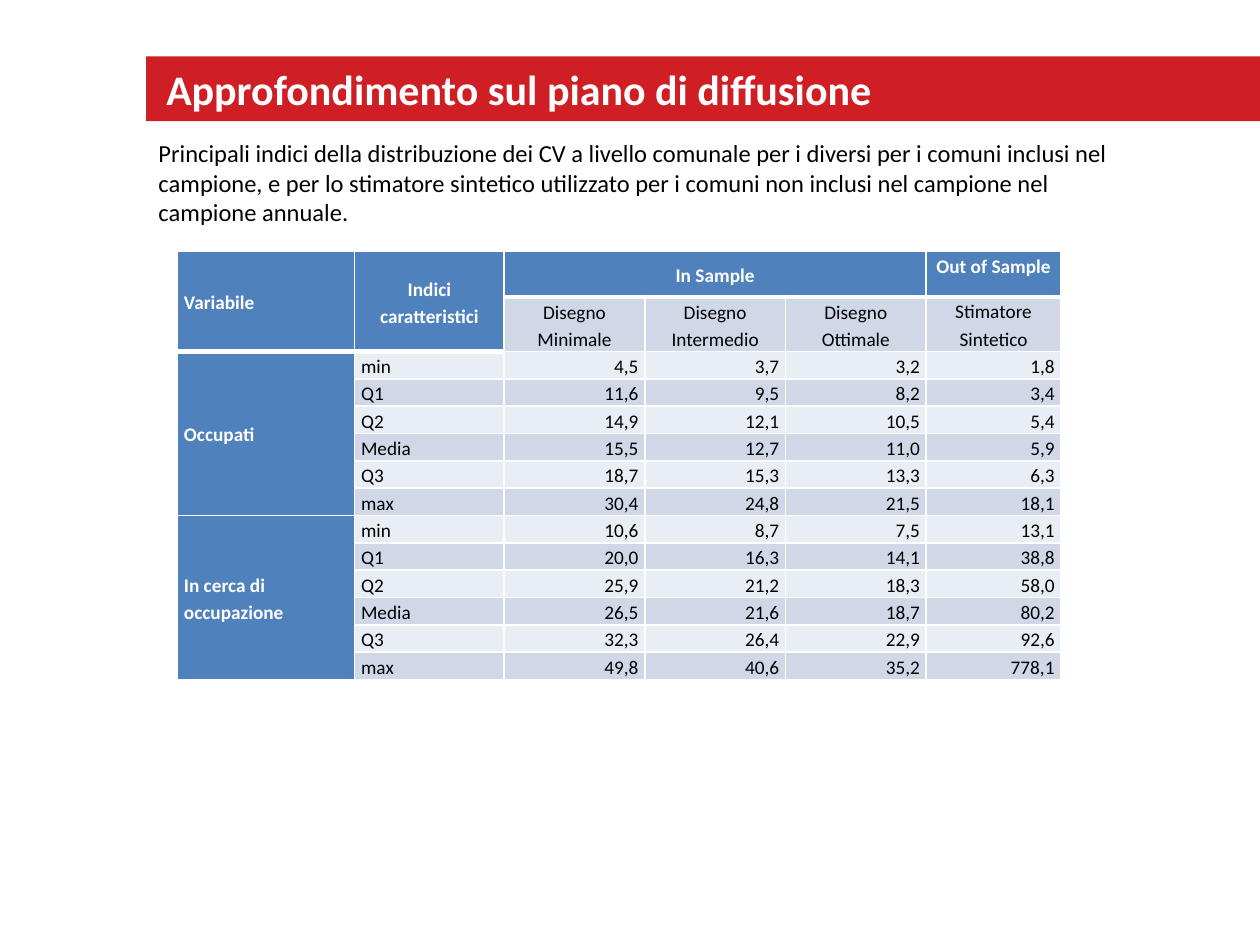
from lxml.etree import SubElement
from pptx import Presentation
from pptx.dml.color import RGBColor
from pptx.enum.text import MSO_ANCHOR as Anchor, MSO_AUTO_SIZE as AutoSize, PP_ALIGN as Align
from pptx.oxml.ns import qn
from pptx.util import Pt

COLORS = {
    "banner": "CF1E24",
    "header": "4F81BD",
    "dark_band": "D0D8E8",
    "light_band": "E9EDF4",
    "white": "FFFFFF",
    "black": "000000",
}
FONT = "Calibri"
TITLE = "Approfondimento sul piano di diffusione"
INTRO = (
    "Principali indici della distribuzione dei CV a livello comunale per i diversi "
    "per i comuni inclusi nel campione, e per lo stimatore sintetico utilizzato per "
    "i comuni non inclusi nel campione nel campione annuale."
)
GROUPS = ["Variabile", "Indici caratteristici", "In Sample", "", "", "Out of Sample"]
ESTIMATORS = ["", "", "Disegno Minimale", "Disegno Intermedio", "Disegno Ottimale", "Stimatore Sintetico"]
INDICES = ["min", "Q1", "Q2", "Media", "Q3", "max"]
VARIABLES = {
    "Occupati": [
        "4,5 3,7 3,2 1,8",
        "11,6 9,5 8,2 3,4",
        "14,9 12,1 10,5 5,4",
        "15,5 12,7 11,0 5,9",
        "18,7 15,3 13,3 6,3",
        "30,4 24,8 21,5 18,1",
    ],
    "In cerca di occupazione": [
        "10,6 8,7 7,5 13,1",
        "20,0 16,3 14,1 38,8",
        "25,9 21,2 18,3 58,0",
        "26,5 21,6 18,7 80,2",
        "32,3 26,4 22,9 92,6",
        "49,8 40,6 35,2 778,1",
    ],
}
COLUMN_WIDTHS = [101.2, 85.4, 80.4, 80.4, 80.4, 77]
HEADER_HEIGHTS = [26, 28]
INDEX_HEIGHT = 13.8
MERGES = [(0, 0, 1, 0), (0, 1, 1, 1), (0, 2, 0, 4), (2, 0, 7, 0), (8, 0, 13, 0)]


def rgb(color):
    """Return the named colour."""
    return RGBColor.from_string(COLORS[color])


def write(frame, text, size, color, bold=False, align=Align.LEFT, spacing=None):
    """Write one formatted paragraph into a text frame."""
    paragraph = frame.paragraphs[0]
    paragraph.alignment = align
    paragraph.line_spacing = spacing
    run = paragraph.add_run()
    run.text = text
    run.font.name = FONT
    run.font.size = Pt(size)
    run.font.bold = bold
    run.font.color.rgb = rgb(color)


def add_title(slide):
    """Turn the title placeholder into the red banner."""
    banner = slide.shapes.title
    banner.left, banner.top, banner.width, banner.height = Pt(83.5), Pt(32.2), Pt(636.5), Pt(37)
    banner.fill.solid()
    banner.fill.fore_color.rgb = rgb("banner")
    frame = banner.text_frame
    frame.auto_size = AutoSize.NONE
    frame.vertical_anchor = Anchor.MIDDLE
    frame.margin_left = Pt(11.5)
    frame.margin_top = frame.margin_right = frame.margin_bottom = 0
    write(frame, TITLE, 24, "white", bold=True)


def add_intro(slide):
    """Add the paragraph that introduces the table."""
    intro = slide.shapes.add_textbox(Pt(83.5), Pt(75.6), Pt(558.7), Pt(81.4))
    frame = intro.text_frame
    frame.word_wrap = True
    frame.auto_size = AutoSize.SHAPE_TO_FIT_TEXT
    write(frame, INTRO, 14, "black")


def set_borders(cell, bottom):
    """Draw white borders, with the given width at the bottom."""
    properties = cell._tc.get_or_add_tcPr()
    for side, width in (("L", 1), ("R", 1), ("T", 1), ("B", bottom)):
        line = SubElement(properties, qn(f"a:ln{side}"), w=str(Pt(width)))
        SubElement(SubElement(line, qn("a:solidFill")), qn("a:srgbClr"), val=COLORS["white"])


def format_cell(cell, text, row, column):
    """Style one cell by its place in the table and write its text."""
    is_header = row == 0 or column == 0 or (row == 1 and column == 1)
    is_thick = row == 0 or (row == 1 and column < 2)
    set_borders(cell, 3 if is_thick else 1)
    cell.fill.solid()
    band = "dark_band" if row % 2 else "light_band"
    cell.fill.fore_color.rgb = rgb("header" if is_header else band)
    cell.margin_left = cell.margin_right = Pt(3.6)
    cell.margin_top = cell.margin_bottom = 0
    cell.vertical_anchor = Anchor.MIDDLE
    if row < 2 and column == 5:
        cell.vertical_anchor = Anchor.TOP
    elif row > 1 and column == 1:
        cell.vertical_anchor = Anchor.BOTTOM
    if not text:
        return
    if column == 0 or (row > 1 and column == 1):
        align = Align.LEFT
    else:
        align = Align.CENTER if row < 2 else Align.RIGHT
    color = "white" if is_header else "black"
    write(cell.text_frame, text, 11, color, is_header, align, 1.15)


def table_rows():
    """Return the cell texts, with blanks where cells are merged."""
    rows = [GROUPS, ESTIMATORS]
    for variable, lines in VARIABLES.items():
        for position, (index, line) in enumerate(zip(INDICES, lines)):
            rows.append([variable if position == 0 else "", index, *line.split()])
    return rows


def add_cv_table(slide):
    """Add the table of CV distribution indices."""
    rows = table_rows()
    heights = HEADER_HEIGHTS + [INDEX_HEIGHT] * (len(rows) - len(HEADER_HEIGHTS))
    table = slide.shapes.add_table(
        len(rows), len(COLUMN_WIDTHS), Pt(101.5), Pt(143.7), Pt(sum(COLUMN_WIDTHS)), Pt(sum(heights))
    ).table
    for column, width in zip(table.columns, COLUMN_WIDTHS):
        column.width = Pt(width)
    for row, height in zip(table.rows, heights):
        row.height = Pt(height)
    for top, left, bottom, right in MERGES:
        table.cell(top, left).merge(table.cell(bottom, right))
    for row, texts in enumerate(rows):
        for column, text in enumerate(texts):
            format_cell(table.cell(row, column), text, row, column)


def main():
    """Build and save the slide."""
    presentation = Presentation()
    presentation.slide_width, presentation.slide_height = Pt(720), Pt(540)
    slide = presentation.slides.add_slide(presentation.slide_layouts[5])
    add_title(slide)
    add_cv_table(slide)
    add_intro(slide)
    presentation.save("out.pptx")


if __name__ == "__main__":
    main()
